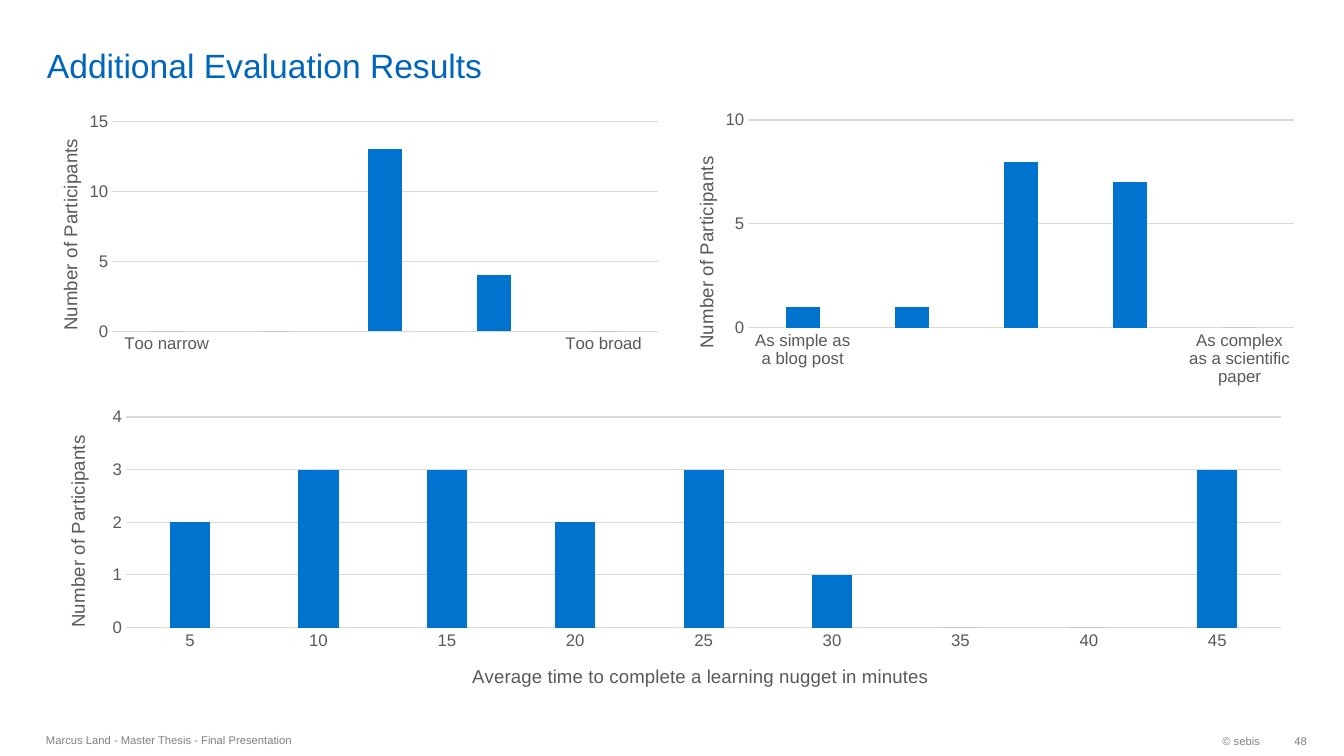
from dataclasses import dataclass

from pptx import Presentation
from pptx import util as u
from pptx.chart.data import CategoryChartData
from pptx.dml.color import RGBColor
from pptx.enum import chart as charts
from pptx.enum import text
from pptx.oxml import parse_xml
from pptx.oxml.ns import nsdecls, qn


@dataclass(frozen=True)
class Theme:
    font: str = "Arial"
    heading: str = "0065BD"
    bar: str = "0073CF"
    label: str = "595959"
    grid: str = "D9D9D9"
    footer: str = "808080"
    heading_size: float = 24
    axis_title_size: float = 13.3
    tick_size: float = 12
    chart_size: float = 10
    footer_size: float = 8
    line_width: float = 0.75


THEME = Theme()
PARTICIPANTS = "Number of Participants"


def px(count):
    return u.Emu(round(count * 914400 / 100.8))


def color(code):
    return RGBColor.from_string(code)


def style_font(font, size, code):
    font.name = THEME.font
    font.size = u.Pt(size)
    font.bold = False
    font.color.rgb = color(code)


def write_text(frame, words, *, size, code, align=text.PP_ALIGN.LEFT,
               anchor=text.MSO_ANCHOR.MIDDLE, margins=(10, 5, 10, 5)):
    frame.word_wrap = True
    frame.auto_size = text.MSO_AUTO_SIZE.NONE
    frame.vertical_anchor = anchor
    frame.margin_left, frame.margin_top, frame.margin_right, frame.margin_bottom = map(px, margins)
    para = frame.paragraphs[0]
    para.alignment = align
    span = para.add_run()
    span.text = words
    style_font(span.font, size, code)


def add_heading(page, words):
    heading = page.shapes.title
    heading.left, heading.top, heading.width, heading.height = map(px, (37, 5, 1167, 80))
    write_text(heading.text_frame, words, size=THEME.heading_size, code=THEME.heading,
               anchor=text.MSO_ANCHOR.BOTTOM, margins=(10, 0, 10, 0))


def add_footer(page, words, place, **layout):
    box = page.shapes.add_textbox(*map(px, place))
    write_text(box.text_frame, words, size=THEME.footer_size, code=THEME.footer, **layout)


def set_layout(parent, index, inner=False, **fractions):
    for old in parent.findall(qn("c:layout")):
        parent.remove(old)
    target = '<c:layoutTarget val="inner"/>' if inner else ""
    modes = "".join(f'<c:{key}Mode val="edge"/>' for key in ("x", "y"))
    values = "".join(f'<c:{key} val="{value}"/>' for key, value in fractions.items())
    parent.insert(index, parse_xml(
        f'<c:layout {nsdecls("c")}><c:manualLayout>{target}{modes}{values}'
        '</c:manualLayout></c:layout>'))


def title_axis(axis, words, x, y, rotation=0):
    title = axis.axis_title
    frame = title.text_frame
    span = frame.paragraphs[0].add_run()
    span.text = words
    style_font(span.font, THEME.axis_title_size, THEME.label)
    body = title._element.find(".//" + qn("a:bodyPr"))
    body.set("rot", str(rotation * 60000))
    body.set("vert", "horz")
    set_layout(title._element, 1, x=x, y=y)


def style_line(line):
    line.color.rgb = color(THEME.grid)
    line.width = u.Pt(THEME.line_width)


def style_axis(axis):
    axis.major_tick_mark = axis.minor_tick_mark = charts.XL_TICK_MARK.NONE
    style_font(axis.tick_labels.font, THEME.tick_size, THEME.label)


def add_bars(page, place, categories, values, *, top, step, plot, title_at):
    data = CategoryChartData()
    data.categories = categories
    data.add_series("Series 1", values)
    chart = page.shapes.add_chart(
        charts.XL_CHART_TYPE.COLUMN_CLUSTERED, *map(px, place), data).chart
    chart.has_title = chart.has_legend = False
    chart.font.name = THEME.font
    chart.font.size = u.Pt(THEME.chart_size)

    bars = chart.plots[0]
    bars.vary_by_categories = False
    bars.gap_width, bars.overlap = 219, -27
    fill = bars.series[0].format.fill
    fill.solid()
    fill.fore_color.rgb = color(THEME.bar)

    style_axis(chart.category_axis)
    style_line(chart.category_axis.format.line)
    counts = chart.value_axis
    style_axis(counts)
    counts.format.line.fill.background()
    counts.minimum_scale, counts.maximum_scale, counts.major_unit = 0, top, step
    style_line(counts.major_gridlines.format.line)
    title_axis(counts, PARTICIPANTS, *title_at, rotation=-90)
    area = chart._chartSpace.find(".//" + qn("c:plotArea"))
    set_layout(area, 0, inner=True, **dict(zip("xywh", plot)))
    return chart


def main():
    deck = Presentation()
    deck.slide_width, deck.slide_height = px(1344), px(756)
    page = deck.slides.add_slide(deck.slide_layouts[5])
    add_heading(page, "Additional Evaluation Results")

    minutes = add_bars(page, (37, 402, 1270, 301), [str(5 * step) for step in range(1, 10)],
                       (2, 3, 3, 2, 3, 1, 0, 0, 3), top=4, step=1,
                       plot=(0.07, 0.05, 0.91, 0.7), title_at=(0.02, 0.1))
    title_axis(minutes.category_axis, "Average time to complete a learning nugget in minutes",
               0.34, 0.86)
    add_bars(page, (36, 105, 635, 276), ("Too narrow", "", "", "", "Too broad"),
             (0, 0, 13, 4, 0), top=15, step=5,
             plot=(0.12, 0.06, 0.86, 0.76), title_at=(0.03, 0.11))
    add_bars(page, (672, 105, 635, 301),
             ("As simple as a blog post", "", "", "", "As complex as a scientific paper"),
             (1, 1, 8, 7, 0), top=10, step=5,
             plot=(0.12, 0.05, 0.86, 0.69), title_at=(0.03, 0.16))

    right = text.PP_ALIGN.RIGHT
    add_footer(page, "© sebis", (1034, 725, 236, 32), align=right)
    add_footer(page, "Marcus Land - Master Thesis - Final Presentation", (36, 724, 635, 32))
    add_footer(page, "48", (1270, 725, 37, 32), align=right, margins=(10, 5, 0, 5))
    deck.save("out.pptx")


if __name__ == "__main__":
    main()
